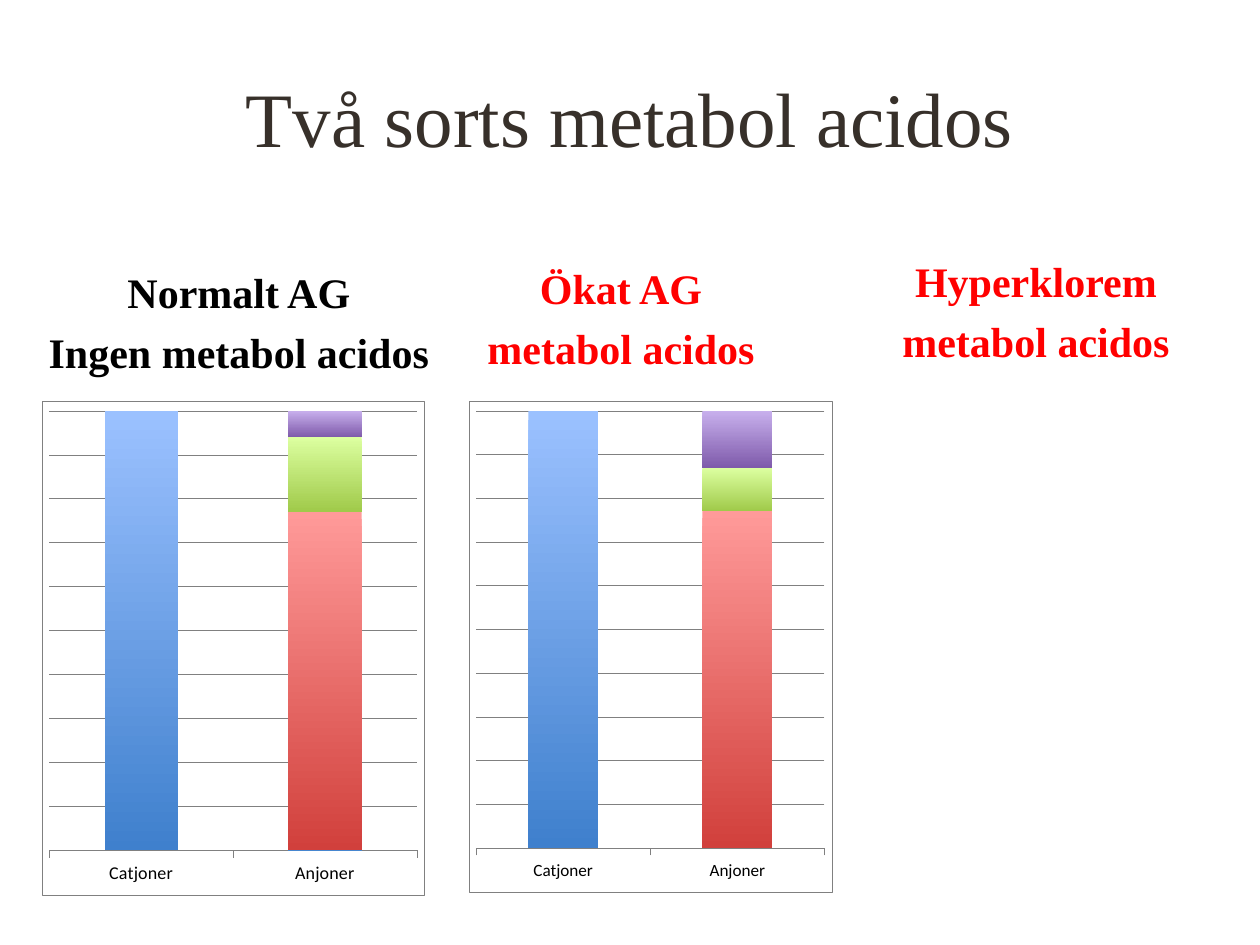
from dataclasses import dataclass

from pptx import Presentation
from pptx.chart.data import CategoryChartData
from pptx.dml.color import RGBColor as Rgb
from pptx.enum.chart import XL_CHART_TYPE as ChartType
from pptx.enum.chart import XL_TICK_LABEL_POSITION as LabelPosition
from pptx.enum.chart import XL_TICK_MARK as TickMark
from pptx.enum.text import MSO_ANCHOR as Anchor
from pptx.enum.text import MSO_AUTO_SIZE as AutoSize
from pptx.enum.text import PP_ALIGN as Align
from pptx.oxml import parse_xml
from pptx.oxml.ns import nsdecls
from pptx.util import Cm, Pt


@dataclass(frozen=True)
class Theme:
    """Colours, fonts and type sizes of the slide."""
    title: str = "37302A"
    normal: str = "000000"
    alert: str = "FF0000"
    paper: str = "FFFFFF"
    rule: str = "808080"
    rule_width: float = 0.14
    serif: str = "Times New Roman"
    sans: str = "Calibri"
    title_size: float = 44
    heading_size: float = 24
    heading_gap: float = 5.5
    gradients: tuple = (
        ("9BC1FF", "3F80CD"),
        ("FF9A99", "D1403C"),
        ("DCFFA0", "A0CA4A"),
        ("C8B0ED", "7F5BAB"),
    )


@dataclass(frozen=True)
class Area:
    """Place and size in centimetres."""
    left: float
    top: float
    width: float
    height: float

    def lengths(self) -> tuple:
        """Give the four values as lengths."""
        return Cm(self.left), Cm(self.top), Cm(self.width), Cm(self.height)


@dataclass(frozen=True)
class Heading:
    """Two-line heading above a chart column."""
    area: Area
    lines: tuple
    color: str


@dataclass(frozen=True)
class IonChart:
    """Stacked chart of one cation and three anion shares."""
    area: Area
    anions: tuple
    size: float


THEME = Theme()
HEADINGS = (
    Heading(Area(8.71, 4.93, 7.62, 2.72), ("Ökat AG", "metabol acidos"), THEME.alert),
    Heading(Area(17.09, 5, 7.59, 2.51), ("Hyperklorem", "metabol acidos"), THEME.alert),
    Heading(Area(0.51, 5, 8.61, 2.72), ("Normalt AG", "Ingen metabol acidos"), THEME.normal),
)
CHARTS = (
    IonChart(Area(9.45, 8.08, 7.32, 9.91), (77, 10, 13), 9.8),
    IonChart(Area(0.84, 8.08, 7.72, 9.96), (77, 17, 6), 10.3),
)


def write(frame, lines: tuple, *, size: float, color: str, anchor,
          bold: bool = False, gap: float = 0) -> None:
    """Fill a text frame with centred paragraphs."""
    frame.word_wrap = True
    frame.auto_size = AutoSize.NONE
    frame.vertical_anchor = anchor
    for index, line in enumerate(lines):
        para = frame.add_paragraph() if index else frame.paragraphs[0]
        para.alignment = Align.CENTER
        para.space_before = Pt(gap)
        span = para.add_run()
        span.text = line
        span.font.name = THEME.serif
        span.font.size = Pt(size)
        span.font.bold = bold
        span.font.color.rgb = Rgb.from_string(color)


def add_heading(page, heading: Heading) -> None:
    """Add a column heading."""
    box = page.shapes.add_textbox(*heading.area.lengths())
    write(box.text_frame, heading.lines, size=THEME.heading_size, color=heading.color,
          anchor=Anchor.BOTTOM, bold=True, gap=THEME.heading_gap)


def style_rule(line) -> None:
    """Give a chart line the thin grey style."""
    line.color.rgb = Rgb.from_string(THEME.rule)
    line.width = Pt(THEME.rule_width)


def frame_chart(chart) -> None:
    """Set the chart background, border and inner plot area."""
    chart.font._element.getparent().getparent().getparent().addprevious(parse_xml(
        f'<c:spPr {nsdecls("c", "a")}>'
        f'<a:solidFill><a:srgbClr val="{THEME.paper}"/></a:solidFill>'
        f'<a:ln w="{Pt(THEME.rule_width)}"><a:solidFill>'
        f'<a:srgbClr val="{THEME.rule}"/></a:solidFill></a:ln></c:spPr>'))
    plot_area = chart._chartSpace.chart.plotArea
    for old in plot_area.findall("{*}layout"):
        plot_area.remove(old)
    sizes = "".join(f'<c:{key} val="{value}"/>' for key, value in
                    (("x", 0.02), ("y", 0.02), ("w", 0.96), ("h", 0.89)))
    plot_area.insert(0, parse_xml(
        f'<c:layout {nsdecls("c")}><c:manualLayout><c:layoutTarget val="inner"/>'
        f'<c:xMode val="edge"/><c:yMode val="edge"/>{sizes}</c:manualLayout></c:layout>'))


def add_ion_chart(page, ions: IonChart) -> None:
    """Add a stacked chart of cations and anions."""
    data = CategoryChartData()
    data.categories = ("Catjoner", "Anjoner")
    pairs = ((100, 0), *((0, share) for share in ions.anions))
    for number, pair in enumerate(pairs, 1):
        data.add_series(f"Series {number}", pair)
    chart = page.shapes.add_chart(
        ChartType.COLUMN_STACKED_100, *ions.area.lengths(), data).chart
    chart.has_legend = False
    chart.has_title = False
    chart.font.name = THEME.sans
    chart.font.size = Pt(ions.size)
    chart.font.color.rgb = Rgb.from_string(THEME.normal)
    frame_chart(chart)

    plot = chart.plots[0]
    plot.gap_width = 150
    plot.overlap = 100
    plot.vary_by_categories = False
    for series, colors in zip(plot.series, THEME.gradients):
        fill = series.format.fill
        fill.gradient()
        fill.gradient_angle = 270
        for stop, color in zip(fill.gradient_stops, colors):
            stop.color.rgb = Rgb.from_string(color)

    names = chart.category_axis
    names.major_tick_mark = TickMark.OUTSIDE
    names.minor_tick_mark = TickMark.NONE
    names.tick_label_position = LabelPosition.LOW
    style_rule(names.format.line)
    values = chart.value_axis
    values.visible = False
    values.major_unit = 0.1
    values.has_major_gridlines = True
    style_rule(values.major_gridlines.format.line)


def main() -> None:
    """Build and save the slide."""
    deck = Presentation()
    deck.slide_width, deck.slide_height = Cm(25.4), Cm(19.05)
    page = deck.slides.add_slide(deck.slide_layouts[5])
    title = page.shapes.title
    title.left, title.top, title.width, title.height = Area(1.27, 0.76, 22.86, 3.18).lengths()
    write(title.text_frame, ("Två sorts metabol acidos",), size=THEME.title_size,
          color=THEME.title, anchor=Anchor.MIDDLE)
    for ions in CHARTS:
        add_ion_chart(page, ions)
    for heading in HEADINGS:
        add_heading(page, heading)
    deck.save("out.pptx")


if __name__ == "__main__":
    main()
